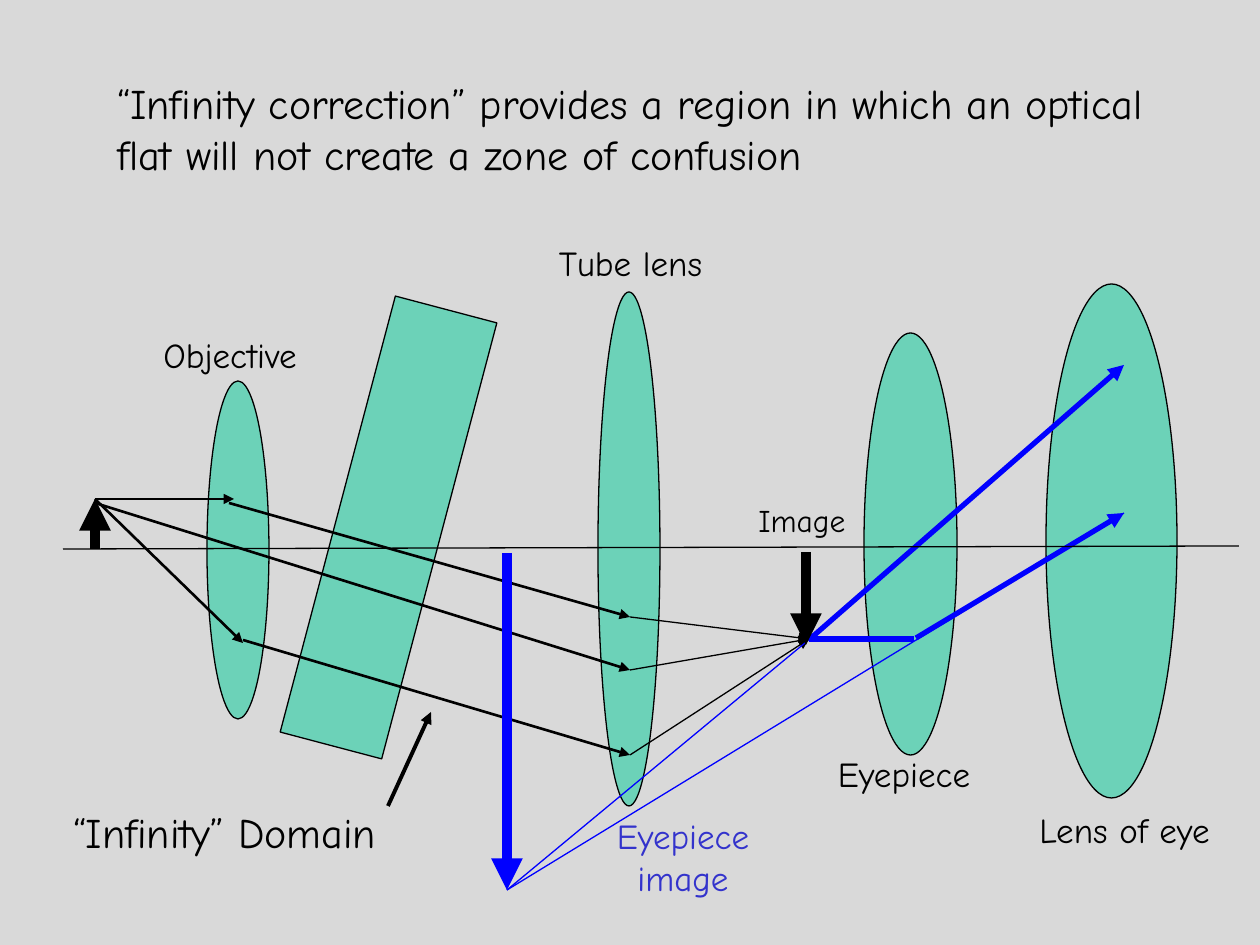
from pptx import Presentation
from pptx.dml.color import RGBColor
from pptx.enum.shapes import MSO_CONNECTOR, MSO_SHAPE
from pptx.enum.text import MSO_ANCHOR, MSO_AUTO_SIZE, PP_ALIGN
from pptx.oxml.ns import qn
from pptx.util import Pt
from lxml.etree import SubElement

EMU_PER_INCH, PX_PER_INCH = 914400, 126
FONT = "Comic Neue"
BLACK, BLUE, INDIGO, GLASS, GREY = "000000", "0000FF", "3333CC", "00CC99", "D9D9D9"


def px(length):
    return round(length * EMU_PER_INCH / PX_PER_INCH)


def color(code):
    return RGBColor.from_string(code)


def apply(target, values):
    for name, value in values.items():
        setattr(target, name, value)


class Diagram:
    """Holds the style and the current slide."""

    def __init__(self, page):
        self.page = page
        page.background.fill.solid()
        page.background.fill.fore_color.rgb = color(GREY)

    def glass(self, kind, left, top, width, height, rotation=0):
        shape = self.page.shapes.add_shape(kind, px(left), px(top), px(width), px(height))
        shape.rotation = rotation
        shape.shadow.inherit = False
        shape.fill.solid()
        shape.fill.fore_color.rgb = color(GLASS)
        tint = shape.fill._xPr.find(qn("a:solidFill"))[0]
        SubElement(tint, qn("a:alpha")).set("val", "50000")
        shape.line.color.rgb = color(BLACK)
        shape.line.width = Pt(0.75)

    def line(self, start, end, width=0.75, code=BLACK, arrow=True):
        ray = self.page.shapes.add_connector(
            MSO_CONNECTOR.STRAIGHT, *map(px, start), *map(px, end))
        ray.line.color.rgb = color(code)
        ray.line.width = Pt(width)
        if arrow:
            SubElement(ray.line._get_or_add_ln(), qn("a:tailEnd")).set("type", "triangle")
        SubElement(ray._element.spPr, qn("a:effectLst"))

    def text(self, lines, left, top, width, height, size=20, code=BLACK,
             align=PP_ALIGN.CENTER, anchor=MSO_ANCHOR.MIDDLE, wrap=False):
        box = self.page.shapes.add_textbox(px(left), px(top), px(width), px(height))
        frame = box.text_frame
        apply(frame, {"word_wrap": wrap, "vertical_anchor": anchor,
                      "auto_size": MSO_AUTO_SIZE.SHAPE_TO_FIT_TEXT})
        frame.text = "\n".join(lines)
        for para in frame.paragraphs:
            para.alignment = align
            for span in para.runs:
                apply(span.font, {"name": FONT, "size": Pt(size)})
                span.font.color.rgb = color(code)


def main():
    deck = Presentation()
    apply(deck, {"slide_width": px(1260), "slide_height": px(945)})
    diagram = Diagram(deck.slides.add_slide(deck.slide_layouts[6]))

    # Lenses: eye, tube lens, objective, eyepiece; then the tilted optical flat
    for bounds in [(1046, 284, 131, 514), (598, 292, 62, 514),
                   (207, 381, 62, 338), (864, 333, 93, 422)]:
        diagram.glass(MSO_SHAPE.OVAL, *bounds)
    diagram.glass(MSO_SHAPE.RECTANGLE, 336, 302, 105, 451, rotation=14.8)

    # Rays from the object through the objective to the tube lens
    object_tip = (95, 499)
    tube_points = [(630, 617), (630, 670), (630, 755)]
    ray_starts = [(229, 503), (95, 503), (243, 640)]
    for start, end in zip(ray_starts, tube_points):
        diagram.line(start, end, 1.5)
    for end in [(234, 499), (243, 643)]:
        diagram.line(object_tip, end, 1.5)

    # Rays from the tube lens to the image
    image_tip = (809, 639)
    for start in tube_points:
        diagram.line(start, image_tip)

    # Rays through the eyepiece, and their extensions back to the virtual image
    virtual_tip = (507, 890)
    upper_eye, lower_eye = (1124, 365), (1124, 513)
    diagram.line((811, 638), upper_eye, 3, BLUE)
    diagram.line((916, 638), lower_eye, 3, BLUE)
    diagram.line(image_tip, (914, 639), 3, BLUE, arrow=False)
    for start in [(811, 638), lower_eye]:
        diagram.line(start, virtual_tip, code=BLUE, arrow=False)

    # Object, image and virtual image arrows, the pointer and the optical axis
    diagram.line((95, 549), object_tip, 6)
    diagram.line((806, 552), (806, 645), 6)
    diagram.line((507, 553), virtual_tip, 6, BLUE)
    diagram.line((388, 806), (431, 712), 2.25)
    diagram.line((63, 549), (1239, 546), arrow=False)

    # Title and labels
    diagram.text(["“Infinity correction” provides a region in which an optical "
                  "flat will not create a zone of confusion"],
                 105, 63, 1074, 130, size=24, align=PP_ALIGN.LEFT, wrap=True)
    diagram.text(["“Infinity” Domain"], 42, 796, 365, 72, size=24)
    diagram.text(["Image"], 746, 495, 117, 57, size=18,
                 align=PP_ALIGN.LEFT, anchor=MSO_ANCHOR.TOP)
    diagram.text(["Eyepiece", "image"], 598, 801, 170, 111, code=INDIGO)
    diagram.text(["Objective"], 136, 324, 188, 62)
    diagram.text(["Tube lens"], 539, 231, 183, 62)
    diagram.text(["Eyepiece"], 819, 743, 170, 62)
    diagram.text(["Lens of eye"], 1018, 798, 213, 62)

    deck.save("out.pptx")


if __name__ == "__main__":
    main()
